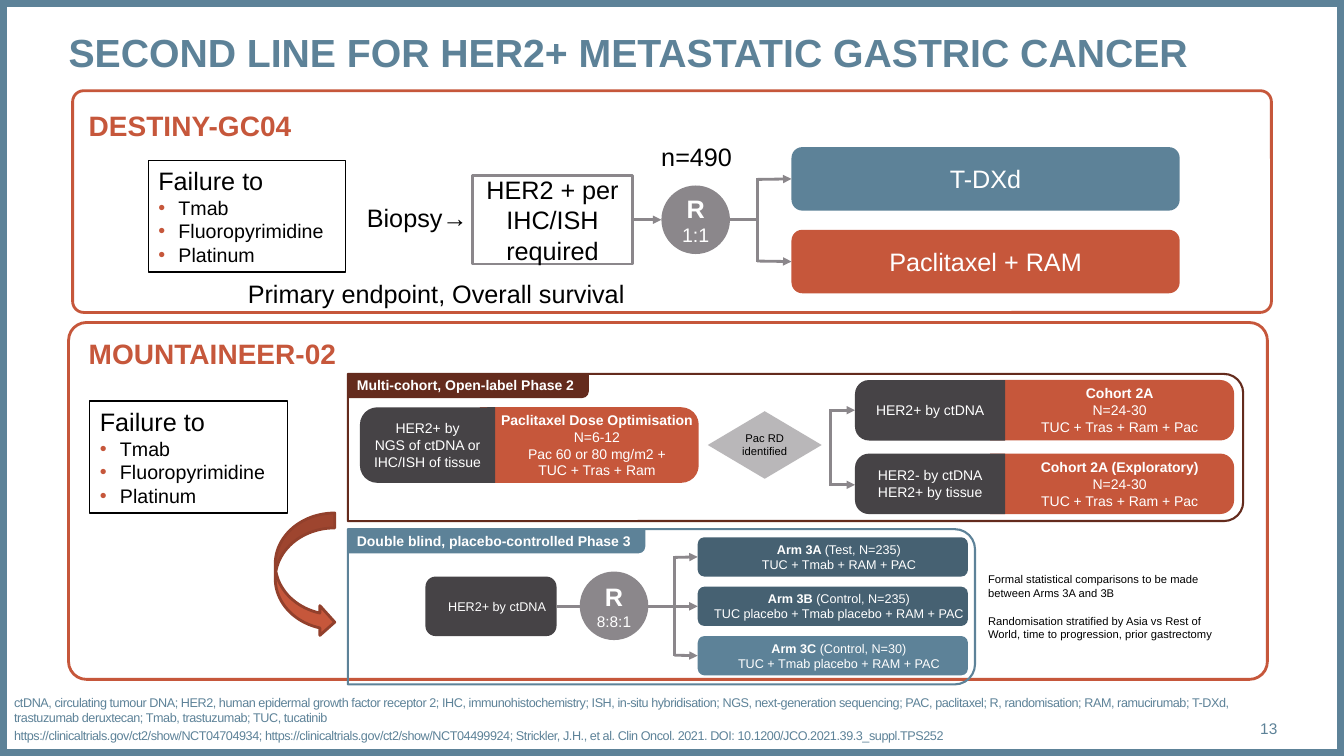
from dataclasses import dataclass

from pptx import Presentation
from pptx.dml.color import RGBColor as RGB
from pptx.enum.shapes import MSO_CONNECTOR as CONN, MSO_SHAPE as SHAPE
from pptx.enum.text import MSO_ANCHOR as ANCHOR, MSO_AUTO_SIZE as FIT, PP_ALIGN as ALIGN
from pptx.oxml.ns import qn
from pptx.util import Inches, Pt
from lxml import etree


@dataclass(frozen=True)
class Theme:
    font: str = "Arial"
    blue: str = "5D8298"
    navy: str = "466172"
    rust: str = "C6573B"
    rust_edge: str = "92402C"
    maroon: str = "642B1D"
    dark: str = "464346"
    grey: str = "8B878B"
    silver: str = "B9B7B9"
    black: str = "000000"
    white: str = "FFFFFF"
    title: float = 28
    heading: float = 20
    large: float = 18
    medium: float = 14
    ratio: float = 11
    card: float = 10
    arm: float = 9
    note: float = 8


T = Theme()
NO_INSET = (0, 0, 0, 0)
TEXT_INSET = (0.1, 0.05, 0.1, 0.05)
ARM_INSET = (0.12, 0.05, 0, 0.05)


# --- Text ---
def style(p, size, color, bold=False):
    for r in p.runs:
        r.font.name, r.font.size, r.font.bold = T.font, Pt(size), bold
        r.font.color.rgb = RGB.from_string(color)


def frame_text(sp, inset, anchor, wrap):
    tf = sp.text_frame
    tf.auto_size, tf.word_wrap, tf.vertical_anchor = FIT.NONE, wrap, anchor
    tf.margin_left, tf.margin_top, tf.margin_right, tf.margin_bottom = map(Inches, inset)
    return tf


def write(sp, text, size, color=T.white, bold=False, lead="", lead_size=None,
          align=ALIGN.CENTER, inset=NO_INSET, anchor=ANCHOR.MIDDLE, wrap=True):
    """Fill a shape with lines of text; the lead is a bold opening on the first line."""
    tf = frame_text(sp, inset, anchor, wrap)
    tf.text = text
    if lead:
        tf.paragraphs[0].text = lead
        style(tf.paragraphs[0], lead_size or size, color, True)
        first_line = text.split("\n")[0]
        if first_line:
            r = tf.paragraphs[0].add_run()
            r.text = first_line
            r.font.name, r.font.size, r.font.bold = T.font, Pt(size), False
            r.font.color.rgb = RGB.from_string(color)
    for i, p in enumerate(tf.paragraphs):
        p.alignment = align
        if not (lead and i == 0):
            style(p, size, color, bold)
    return tf


def label(slide, box, text, size, color=T.black, **options):
    sp = slide.shapes.add_textbox(*map(Inches, box))
    settings = dict(align=ALIGN.LEFT, anchor=ANCHOR.TOP, wrap=False)
    return write(sp, text, size, color, **{**settings, **options})


def place(sp, box):
    sp.left, sp.top, sp.width, sp.height = map(Inches, box)


def criteria_list(sp, box):
    place(sp, box)
    sp.line.color.rgb, sp.line.width = RGB.from_string(T.black), Pt(1)
    tf = frame_text(sp, TEXT_INSET, ANCHOR.TOP, True)
    tf.text = "Failure to\nTmab\nFluoropyrimidine\nPlatinum"
    for i, p in enumerate(tf.paragraphs):
        p.space_before = Pt(0)
        style(p, T.medium if i else T.large, T.black)
        pPr = p._p.get_or_add_pPr()
        indent = Inches(0.2) if i else 0
        pPr.set("marL", str(indent))
        pPr.set("indent", str(-indent))
        if i:
            color = etree.SubElement(pPr, qn("a:buClr"))
            etree.SubElement(color, qn("a:srgbClr")).set("val", T.rust)
            etree.SubElement(pPr, qn("a:buFont")).set("typeface", T.font)
            etree.SubElement(pPr, qn("a:buChar")).set("char", "•")
        else:
            etree.SubElement(pPr, qn("a:buNone"))


# --- Shapes and lines ---
def shape(slide, kind, box, fill=None, line=None, width=2, adj=()):
    sp = slide.shapes.add_shape(kind, *map(Inches, box))
    sp.shadow.inherit = False
    for i, value in enumerate(adj):
        sp.adjustments[i] = value
    if fill:
        sp.fill.solid()
        sp.fill.fore_color.rgb = RGB.from_string(fill)
    else:
        sp.fill.background()
    if line:
        sp.line.color.rgb, sp.line.width = RGB.from_string(line), Pt(width)
    else:
        sp.line.fill.background()
    return sp


def half_round(slide, box, rotation, adj=0.23, **paint):
    """Rectangle rounded on the right (rotation 90) or on the left (270)."""
    x, y, w, h = box
    turned = (x + (w - h) / 2, y + (h - w) / 2, h, w)
    sp = shape(slide, SHAPE.ROUND_2_SAME_RECTANGLE, turned, adj=(adj, 0), **paint)
    sp.rotation = rotation


def line(slide, x1, y1, x2, y2, arrow=True, start=None, end=None):
    cn = slide.shapes.add_connector(CONN.STRAIGHT, *map(Inches, (x1, y1, x2, y2)))
    if start:
        cn.begin_connect(start, 3)
    if end:
        cn.end_connect(end, 1)
    cn.line.color.rgb, cn.line.width = RGB.from_string(T.grey), Pt(2)
    spPr = cn._element.spPr
    if arrow:
        etree.SubElement(spPr.find(qn("a:ln")), qn("a:tailEnd")).set("type", "triangle")
    etree.SubElement(spPr, qn("a:effectLst"))


def fork(slide, x, x_end, ys, targets=(None, None)):
    line(slide, x, ys[0] - 0.01, x, ys[-1] + 0.01, arrow=False)
    for y, target in zip(ys, targets):
        line(slide, x, y, x_end, y, end=target)


def randomisation(slide, x, y, ratio, size):
    sp = shape(slide, SHAPE.OVAL, (x, y, 0.68, 0.68), T.grey)
    write(sp, "\n" + ratio, size, lead="R", lead_size=T.large)


def card(slide, x, y, w, h, split, criterion, lead, detail):
    """Dark criterion on the left, treatment on the right."""
    half_round(slide, (x + split - 0.15, y, w - split + 0.15, h), 90, fill=T.rust)
    half_round(slide, (x, y, split, h), 270, fill=T.dark)
    centred = dict(align=ALIGN.CENTER, anchor=ANCHOR.MIDDLE)
    label(slide, (x, y, split, h), criterion, T.card, T.white, **centred)
    label(slide, (x + split, y, w - split, h), "\n" + detail, T.card, T.white, lead=lead, **centred)


def phase_panel(slide, box, tab_width, text, color):
    x, y = box[:2]
    tab = shape(slide, SHAPE.ROUND_1_RECTANGLE, (x, y, tab_width, 0.24), color, adj=(0.28,))
    tab._element.spPr.get_or_add_xfrm().set("flipV", "1")
    label(slide, (x + 0.09, y + 0.03, tab_width - 0.15, 0.17), text, T.card, T.white, bold=True)
    half_round(slide, box, 90, adj=0.13, line=color, width=1.5)


def study_frame(slide, box, name, name_box):
    shape(slide, SHAPE.ROUNDED_RECTANGLE, box, line=T.rust, adj=(0.05,))
    label(slide, name_box, name, T.heading, T.rust, bold=True, inset=(0, 0.05, 0.1, 0.05))


# --- Studies ---
def destiny(slide):
    study_frame(slide, (0.72, 0.9, 11.89, 2.2), "DESTINY-GC04", (0.88, 1.03, 2.21, 0.44))
    arms = []
    for y, text, color in ((1.46, "T-DXd", T.blue), (2.28, "Paclitaxel + RAM", T.rust)):
        sp = shape(slide, SHAPE.ROUNDED_RECTANGLE, (7.85, y, 3.85, 0.63), color, adj=(0.17,))
        write(sp, text, T.large)
        arms.append(sp)
    for box, text in (((3.54, 1.96, 1.21, 0.4), "Biopsy→"),
                      ((6.46, 1.35, 0.91, 0.4), "n=490"),
                      ((2.36, 2.71, 3.97, 0.4), "Primary endpoint, Overall survival")):
        label(slide, box, text, T.large, inset=TEXT_INSET)
    test = shape(slide, SHAPE.RECTANGLE, (4.69, 1.74, 1.58, 0.88), T.white, T.grey)
    write(test, "HER2 + per IHC/ISH required", T.large, T.black, inset=TEXT_INSET)
    line(slide, 6.27, 2.18, 6.56, 2.18, start=test)
    line(slide, 7.24, 2.18, 7.51, 2.18, arrow=False)
    fork(slide, 7.51, 7.85, (1.78, 2.59), arms)
    randomisation(slide, 6.56, 1.84, "1:1", T.medium)


def mountaineer(slide):
    study_frame(slide, (0.68, 3.2, 11.89, 3.54), "MOUNTAINEER-02", (0.88, 3.29, 2.75, 0.44))
    shape(slide, SHAPE.CURVED_RIGHT_ARROW, (2.73, 5.09, 0.59, 1.23), T.rust, T.rust_edge)

    # Phase 2
    phase_panel(slide, (3.45, 3.71, 8.88, 1.46), 2.39, "Multi-cohort, Open-label Phase 2", T.maroon)
    card(slide, 3.57, 4.04, 3.36, 0.75, 1.34, "HER2+ by\nNGS of ctDNA or\nIHC/ISH of tissue",
         "Paclitaxel Dose Optimisation", "N=6-12\nPac 60 or 80 mg/m2 +\nTUC + Tras + Ram")
    shape(slide, SHAPE.DIAMOND, (7.02, 4.08, 1.13, 0.67), T.silver)
    label(slide, (7.36, 4.28, 0.45, 0.27), "Pac RD\nidentified", T.note, align=ALIGN.CENTER)
    for y, criterion, cohort in ((3.77, "HER2+ by ctDNA", "Cohort 2A"),
                                 (4.5, "HER2- by ctDNA\nHER2+ by tissue", "Cohort 2A (Exploratory)")):
        card(slide, 8.48, y, 3.76, 0.6, 1.49, criterion, cohort, "N=24-30\nTUC + Tras + Ram + Pac")
    fork(slide, 8.24, 8.48, (4.07, 4.81))

    # Phase 3
    phase_panel(slide, (3.45, 5.25, 6.22, 1.54), 2.95, "Double blind, placebo-controlled Phase 3", T.blue)
    entry = shape(slide, SHAPE.ROUNDED_RECTANGLE, (4.22, 5.72, 1.3, 0.59), T.dark, adj=(0.17,))
    write(entry, "HER2+ by ctDNA", T.arm, inset=ARM_INSET)
    arms = []
    for i, (lead, text, color) in enumerate((
            ("Arm 3A ", "(Test, N=235)\nTUC + Tmab + RAM + PAC", T.navy),
            ("Arm 3B ", "(Control, N=235)\nTUC placebo + Tmab placebo + RAM + PAC", T.navy),
            ("Arm 3C ", "(Control, N=30)\nTUC + Tmab placebo + RAM + PAC", T.blue))):
        box = (6.92, 5.33 + 0.49 * i, 2.68, 0.39)
        sp = shape(slide, SHAPE.ROUNDED_RECTANGLE, box, color, adj=(0.17,))
        write(sp, text, T.arm, lead=lead, inset=ARM_INSET)
        arms.append(sp)
    line(slide, 5.52, 6.01, 6.92, 6.01, start=entry, end=arms[1])
    fork(slide, 6.69, 6.92, (5.53, 6.5), arms[::2])
    randomisation(slide, 5.75, 5.67, "8:8:1", T.ratio)
    label(slide, (9.8, 5.68, 2.11, 0.27),
          "Formal statistical comparisons to be made\nbetween Arms 3A and 3B", T.note)
    label(slide, (9.8, 6.09, 2.25, 0.27),
          "Randomisation stratified by Asia vs Rest of\nWorld, time to progression, prior gastrectomy", T.note)


def footer(slide):
    tf = label(slide, (0.14, 6.76, 12.65, 0.61),
               "ctDNA, circulating tumour DNA; HER2, human epidermal growth factor receptor 2; "
               "IHC, immunohistochemistry; ISH, in-situ hybridisation; NGS, next-generation sequencing; "
               "PAC, paclitaxel; R, randomisation; RAM, ramucirumab; T-DXd, trastuzumab deruxtecan; "
               "Tmab, trastuzumab; TUC, tucatinib\n"
               "https://clinicaltrials.gov/ct2/show/NCT04704934; "
               "https://clinicaltrials.gov/ct2/show/NCT04499924; Strickler, J.H., et al. Clin Oncol. 2021. "
               "DOI: 10.1200/JCO.2021.39.3_suppl.TPS252",
               T.arm, T.blue, anchor=ANCHOR.BOTTOM, wrap=True)
    for p in tf.paragraphs:
        p.space_after = Pt(2)
        for r in p.runs:
            r._r.get_or_add_rPr().set("spc", "-30")
    label(slide, (11.81, 7.03, 0.86, 0.4), "13", T.ratio, T.blue, align=ALIGN.RIGHT, anchor=ANCHOR.MIDDLE)


def main():
    prs = Presentation()
    prs.slide_width, prs.slide_height = Inches(13.33), Inches(7.5)
    slide = prs.slides.add_slide(prs.slide_layouts[3])
    shape(slide, SHAPE.RECTANGLE, (0, 0, 13.33, 7.5), line=T.blue, width=10)
    title, first_list, second_list = slide.placeholders
    place(title, (0.68, 0.28, 11.99, 0.94))
    write(title, "SECOND LINE FOR HER2+ METASTATIC GASTRIC CANCER", T.title, T.blue,
          bold=True, align=ALIGN.LEFT, anchor=ANCHOR.TOP)
    criteria_list(first_list, (1.47, 1.59, 1.96, 1.11))
    criteria_list(second_list, (0.89, 3.98, 1.96, 1.11))
    destiny(slide)
    mountaineer(slide)
    footer(slide)
    prs.save("out.pptx")


if __name__ == "__main__":
    main()
